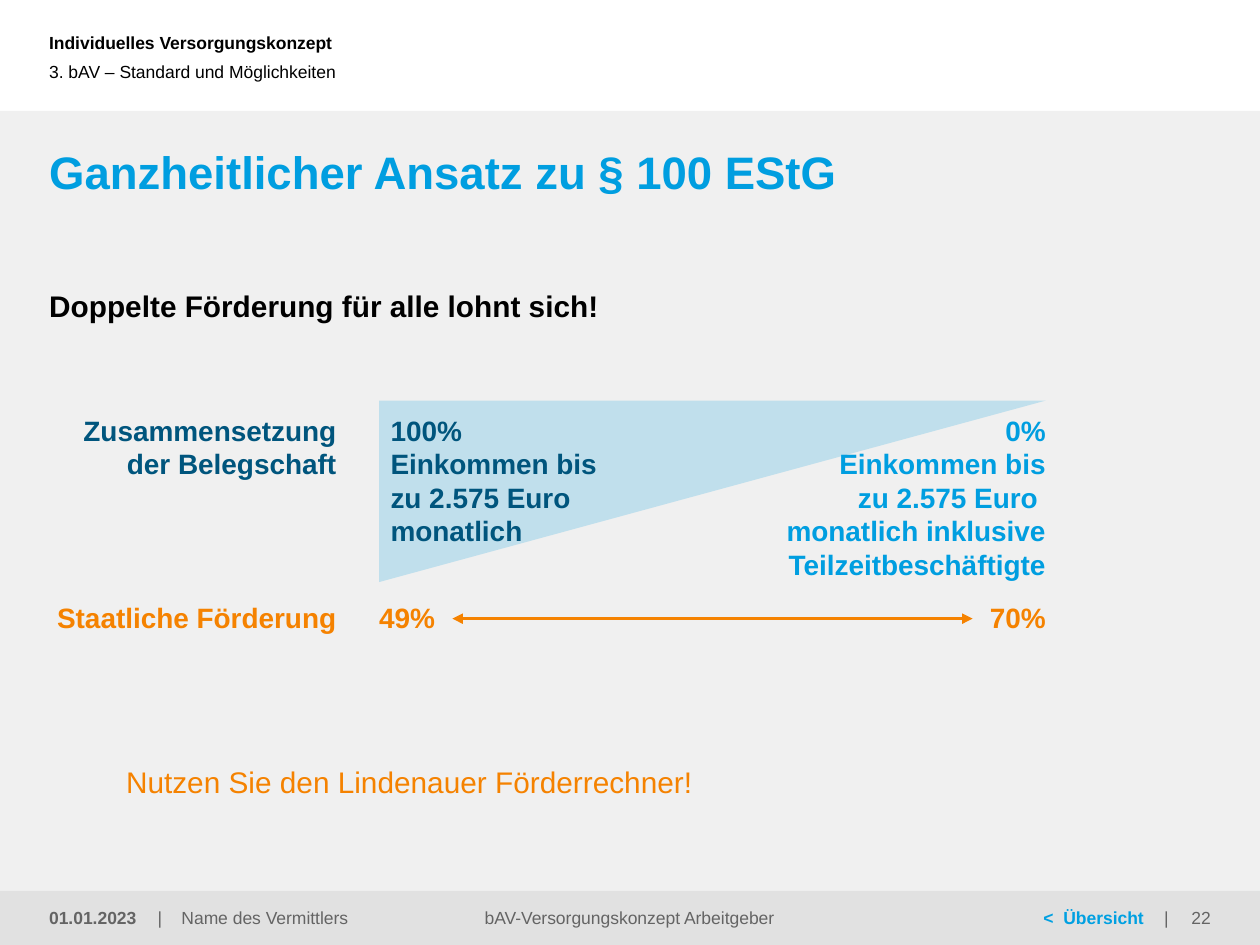
"""Build the slide on the holistic approach to § 100 EStG."""
from lxml import etree
from pptx import Presentation
from pptx.dml.color import RGBColor
from pptx.enum.shapes import MSO_CONNECTOR, MSO_SHAPE
from pptx.enum.text import MSO_ANCHOR, MSO_AUTO_SIZE, PP_ALIGN
from pptx.oxml.ns import qn
from pptx.util import Inches, Pt

LEFT, CENTER, RIGHT = PP_ALIGN.LEFT, PP_ALIGN.CENTER, PP_ALIGN.RIGHT
TOP, MIDDLE = MSO_ANCHOR.TOP, MSO_ANCHOR.MIDDLE
BLACK = RGBColor(0x00, 0x00, 0x00)
PALE = RGBColor(0xF0, 0xF0, 0xF0)
SILVER = RGBColor(0xE1, 0xE1, 0xE1)
GREY = RGBColor(0x64, 0x64, 0x64)
BLUE = RGBColor(0x00, 0x9E, 0xE0)
LINK = RGBColor(0x00, 0xA0, 0xE1)
NAVY = RGBColor(0x00, 0x55, 0x7D)
ORANGE = RGBColor(0xF5, 0x82, 0x00)

W, H = 10, 7.5
MARGIN = 0.39
BODY_W = W - 2 * MARGIN
HEAD_H, FOOT_H = 0.88, 0.43
FOOT_Y = H - FOOT_H
LABEL_W = 2.28
CHART_X, CHART_W = 3.01, 5.29
CHART_R = CHART_X + CHART_W
CHART_Y, CHART_H = 3.18, 1.44
TEXT_Y, RATE_Y = CHART_Y + 0.1, 4.77
LINE_H, RATE_W = 0.27, 0.67
ARROW_Y, ARROW_X1, ARROW_X2 = 4.91, 3.59, 7.72

TITLE = "Ganzheitlicher Ansatz zu § 100 EStG"
BANDS = [(HEAD_H, H - HEAD_H, PALE), (FOOT_Y, FOOT_H, SILVER)]

SMALL = dict(size=10, anchor=MIDDLE)
FOOT = dict(SMALL, color=GREY)
LEAD = dict(size=17, after=12)
BOLD = dict(size=16, bold=True)
RATE = dict(BOLD, color=ORANGE)

# A paragraph is a string, or a list of (text, format) runs.
TEXTS = [
    (["Individuelles Versorgungskonzept"], (MARGIN, 0, 6.5, 0.67), dict(SMALL, bold=True)),
    (["3. bAV – Standard und Möglichkeiten"], (MARGIN, 0.25, 6.76, 0.63), SMALL),
    (["Doppelte Förderung für alle lohnt sich!"], (MARGIN, 2.28, BODY_W, 0.29),
     dict(LEAD, bold=True)),
    (["Nutzen Sie den Lindenauer Förderrechner!"], (1, 5.9, BODY_W + MARGIN - 1, 0.6),
     dict(LEAD, color=ORANGE, anchor=MIDDLE)),
    (["Zusammensetzung", "der Belegschaft"], (MARGIN, TEXT_Y, LABEL_W, 2 * LINE_H),
     dict(BOLD, color=NAVY, align=RIGHT)),
    (["100%", "Einkommen bis", "zu 2.575 Euro monatlich"],
     (CHART_X + 0.09, TEXT_Y, 2.34, 4 * LINE_H), dict(BOLD, color=NAVY)),
    (["0%", "Einkommen bis", "zu 2.575 Euro \vmonatlich inklusive Teilzeitbeschäftigte"],
     (CHART_R - 2.86, TEXT_Y, 2.86, 5 * LINE_H), dict(BOLD, color=BLUE, align=RIGHT)),
    (["Staatliche Förderung"], (MARGIN, RATE_Y, LABEL_W, LINE_H), dict(RATE, align=RIGHT)),
    (["49%"], (CHART_X, RATE_Y, RATE_W, LINE_H), RATE),
    (["70%"], (CHART_R - RATE_W, RATE_Y, RATE_W, LINE_H), dict(RATE, align=RIGHT)),
    (["01.01.2023"], (MARGIN, FOOT_Y, 0.8, FOOT_H), dict(FOOT, bold=True)),
    (["|\tName des Vermittlers"], (1.25, FOOT_Y, 2.42, FOOT_H), dict(FOOT, tabs=[0.19])),
    (["bAV-Versorgungskonzept Arbeitgeber"], (2.93, FOOT_Y, 4.13, FOOT_H),
     dict(FOOT, align=CENTER)),
    ([[("<\tÜbersicht", dict(color=LINK, bold=True)), ("\t|", {})]],
     (8.28, FOOT_Y, 1.02, FOOT_H), dict(FOOT, tabs=[0.16, 0.96])),
    (["22"], (9.16, FOOT_Y, 0.45, FOOT_H), dict(FOOT, align=RIGHT)),
]


def place(sp, box):
    sp.left, sp.top, sp.width, sp.height = map(Inches, box)


def write(sp, paragraphs, size=10, color=BLACK, bold=False, align=LEFT, anchor=TOP,
          after=0, tabs=()):
    tf = sp.text_frame
    tf.word_wrap, tf.auto_size, tf.vertical_anchor = True, MSO_AUTO_SIZE.NONE, anchor
    tf.margin_left = tf.margin_right = tf.margin_top = tf.margin_bottom = 0
    for i, runs in enumerate(paragraphs):
        p = tf.add_paragraph() if i else tf.paragraphs[0]
        p.alignment, p.space_after = align, Pt(after)
        if tabs:
            stops = etree.SubElement(p._p.get_or_add_pPr(), qn("a:tabLst"))
            for pos in tabs:
                etree.SubElement(stops, qn("a:tab"), pos=str(Inches(pos)), algn="l")
        if isinstance(runs, str):
            p.text = runs
            formats = [{}] * len(p.runs)
        else:
            for text, _ in runs:
                p.add_run().text = text
            formats = [fmt for _, fmt in runs]
        for r, fmt in zip(p.runs, formats):
            r.font.name, r.font.size = "Arial", Pt(size)
            r.font.bold = fmt.get("bold", bold)
            r.font.color.rgb = fmt.get("color", color)


def add_area(s, kind, box, color):
    sp = s.shapes.add_shape(kind, *map(Inches, box))
    sp.shadow.inherit = False
    sp.fill.solid()
    sp.fill.fore_color.rgb = color
    sp.line.fill.background()
    return sp


def add_wedge(s):
    sp = add_area(s, MSO_SHAPE.RIGHT_TRIANGLE, (CHART_X, CHART_Y, CHART_W, CHART_H), BLUE)
    pr = sp._element.spPr
    pr.find(qn("a:xfrm")).set("flipV", "1")
    tint = pr.find(qn("a:solidFill")).find(qn("a:srgbClr"))
    etree.SubElement(tint, qn("a:alpha"), val="20000")


def add_arrow(s):
    ends = (ARROW_X2, ARROW_Y, ARROW_X1, ARROW_Y)
    line = s.shapes.add_connector(MSO_CONNECTOR.STRAIGHT, *map(Inches, ends))
    line.line.color.rgb, line.line.width = ORANGE, Pt(2)
    for end in ("a:headEnd", "a:tailEnd"):
        etree.SubElement(line.line._get_or_add_ln(), qn(end), type="triangle")
    etree.SubElement(line._element.spPr, qn("a:effectLst"))


def main():
    prs = Presentation()
    prs.slide_width, prs.slide_height = Inches(W), Inches(H)
    s = prs.slides.add_slide(prs.slide_layouts[5])
    for y, height, color in BANDS:
        add_area(s, MSO_SHAPE.RECTANGLE, (0, y, W, height), color)
    title = s.shapes.title
    s.shapes._spTree.append(title._element)
    place(title, (MARGIN, 1.14, BODY_W, 0.55))
    write(title, [TITLE], size=26, color=BLUE, bold=True)
    add_wedge(s)
    add_arrow(s)
    for paragraphs, box, fmt in TEXTS:
        write(s.shapes.add_textbox(*map(Inches, box)), paragraphs, **fmt)
    prs.save("out.pptx")


if __name__ == "__main__":
    main()
